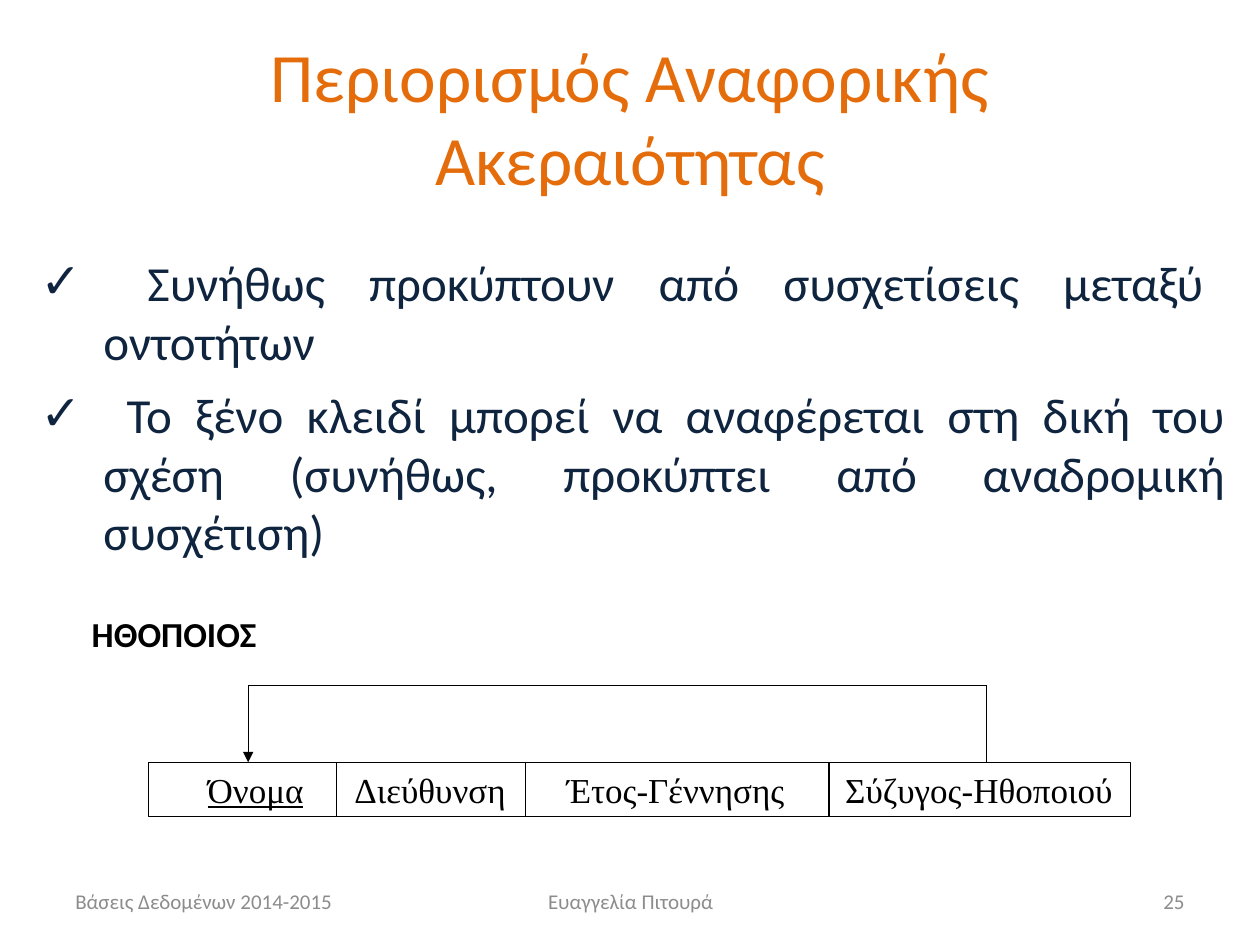
from dataclasses import dataclass

from lxml.etree import SubElement
from pptx import Presentation
from pptx.dml.color import RGBColor
from pptx.enum.shapes import MSO_CONNECTOR, MSO_SHAPE
from pptx.enum.text import MSO_ANCHOR, MSO_AUTO_SIZE, PP_ALIGN
from pptx.oxml.ns import qn
from pptx.util import Emu, Inches, Pt

COLORS = {"title": "E46C0A", "body": "0F243E", "ink": "000000", "footer": "8C8C8C"}

# The slide is a grid of 100 columns by 75 rows
COLUMNS, ROWS = 100, 75
deck = Presentation()
deck.slide_width, deck.slide_height = Inches(10), Inches(7.5)


@dataclass
class Area:
    column: float
    row: float
    columns: float
    rows: float


@dataclass
class Style:
    size: float
    color: str
    align: PP_ALIGN = PP_ALIGN.LEFT
    name: str = "Calibri"
    bold: bool = False


@dataclass
class Field:
    name: str
    text_column: float
    right_edge: float


def across(columns: float) -> Emu:
    return Emu(round(deck.slide_width * columns / COLUMNS))


def down(rows: float) -> Emu:
    return Emu(round(deck.slide_height * rows / ROWS))


def bounds(area: Area) -> tuple:
    return across(area.column), down(area.row), across(area.columns), down(area.rows)


def place(shape, area: Area) -> None:
    shape.left, shape.top, shape.width, shape.height = bounds(area)


def style_paragraph(para, style: Style) -> None:
    para.alignment = style.align
    font = para.font
    font.name, font.size, font.bold = style.name, Pt(style.size), style.bold
    font.color.rgb = RGBColor.from_string(COLORS[style.color])


def write(shape, text: str, style: Style, anchor=MSO_ANCHOR.MIDDLE) -> None:
    frame = shape.text_frame
    frame.word_wrap = True
    frame.auto_size = MSO_AUTO_SIZE.NONE
    frame.vertical_anchor = anchor
    frame.text = text
    for para in frame.paragraphs:
        style_paragraph(para, style)


def add_paragraph_property(para, tag: str, **attributes: str):
    """Add a paragraph property ahead of the default font."""
    properties = para._p.get_or_add_pPr()
    element = SubElement(properties, qn(tag), **attributes)
    properties.find(qn("a:defRPr")).addprevious(element)
    return element


def add_check_bullet(para, indent: int, right_margin: int) -> None:
    properties = para._p.get_or_add_pPr()
    properties.set("marL", str(indent))
    properties.set("indent", str(-indent))
    properties.set("marR", str(right_margin))
    add_paragraph_property(para, "a:buFont", typeface="Calibri")
    add_paragraph_property(para, "a:buChar", char="✓")


def add_line(slide, start: tuple, end: tuple, arrow: bool = False) -> None:
    line = slide.shapes.add_connector(
        MSO_CONNECTOR.STRAIGHT,
        across(start[0]), down(start[1]), across(end[0]), down(end[1]),
    )
    line.line.color.rgb = RGBColor.from_string(COLORS["ink"])
    line.line.width = Pt(0.75)
    if arrow:
        SubElement(line.line._get_or_add_ln(), qn("a:tailEnd"), type="triangle")
    SubElement(line._element.spPr, qn("a:effectLst"))


slide = deck.slides.add_slide(deck.slide_layouts[1])

# Title
title = slide.shapes.title
place(title, Area(5, 3, 90, 12.5))
write(title, "Περιορισμός Αναφορικής Ακεραιότητας", Style(39.6, "title", PP_ALIGN.CENTER))

# Checked list, each item with its own right margin in columns
ITEMS = {
    " Συνήθως προκύπτουν από συσχετίσεις μεταξύ οντοτήτων": 1.7,
    " Το ξένο κλειδί μπορεί να αναφέρεται στη δική του σχέση "
    "(συνήθως, προκύπτει από αναδρομική συσχέτιση)": 0,
}
body = slide.placeholders[1]
place(body, Area(2.2, 19.55, 96, 25.5))
write(body, "\n".join(ITEMS), Style(28, "body", PP_ALIGN.JUSTIFY), MSO_ANCHOR.TOP)
for number, (para, margin) in enumerate(zip(body.text_frame.paragraphs, ITEMS.values())):
    para.space_before = Pt(8 * number)
    add_check_bullet(para, across(5), across(margin))

# Relation name
relation = slide.shapes.add_textbox(*bounds(Area(6.3, 48.1, 20.4, 4.3)))
write(relation, "ΗΘΟΠΟΙΟΣ", Style(20, "ink", bold=True), MSO_ANCHOR.TOP)

# Relation schema: field names on tab stops, the key underlined
FIELDS = [
    Field("Όνομα", 16.5, 26.7),
    Field("Διεύθυνση", 28.15, 41.7),
    Field("Έτος-Γέννησης", 45, 65.8),
    Field("Σύζυγος-Ηθοποιού", 67.1, 89.7),
]
SCHEMA = Area(11.8, 60.5, 77.9, 4.3)
key, *others = FIELDS
names = slide.shapes.add_textbox(*bounds(Area(15.5, SCHEMA.row, 76.7, SCHEMA.rows)))
write(names, key.name, Style(20, "ink", name="Times New Roman"), MSO_ANCHOR.TOP)
para = names.text_frame.paragraphs[0]
para.runs[0].font.underline = True
tab_stops = add_paragraph_property(para, "a:tabLst")
for field in others:
    position = across(field.text_column - key.text_column)
    SubElement(tab_stops, qn("a:tab"), pos=str(position), algn="l")
    span = para.add_run()
    span.text = "\t" + field.name
    span.font.underline = False

# Schema frame and dividers
frame_box = slide.shapes.add_shape(MSO_SHAPE.RECTANGLE, *bounds(SCHEMA))
frame_box.shadow.inherit = False
frame_box.fill.background()
frame_box.line.color.rgb = RGBColor.from_string(COLORS["ink"])
frame_box.line.width = Pt(0.75)
for field in FIELDS[:-1]:
    add_line(slide, (field.right_edge, SCHEMA.row),
             (field.right_edge, SCHEMA.row + SCHEMA.rows))

# Foreign key arrow, from spouse back to name
KEY, SPOUSE, BEND = 19.7, 78.3, 54.4
add_line(slide, (SPOUSE, BEND), (SPOUSE, SCHEMA.row))
add_line(slide, (KEY, BEND), (SPOUSE, BEND))
add_line(slide, (KEY, BEND), (KEY, SCHEMA.row), arrow=True)

# Footer
FOOTERS = [
    ("Βάσεις Δεδομένων 2014-2015", 5, 23.3, PP_ALIGN.LEFT),
    ("Ευαγγελία Πιτουρά", 34.2, 31.7, PP_ALIGN.CENTER),
    ("25", 71.7, 23.3, PP_ALIGN.RIGHT),
]
for text, left, width, align in FOOTERS:
    footer = slide.shapes.add_textbox(*bounds(Area(left, 69.5, width, 4)))
    write(footer, text, Style(12, "footer", align))

deck.save("out.pptx")
